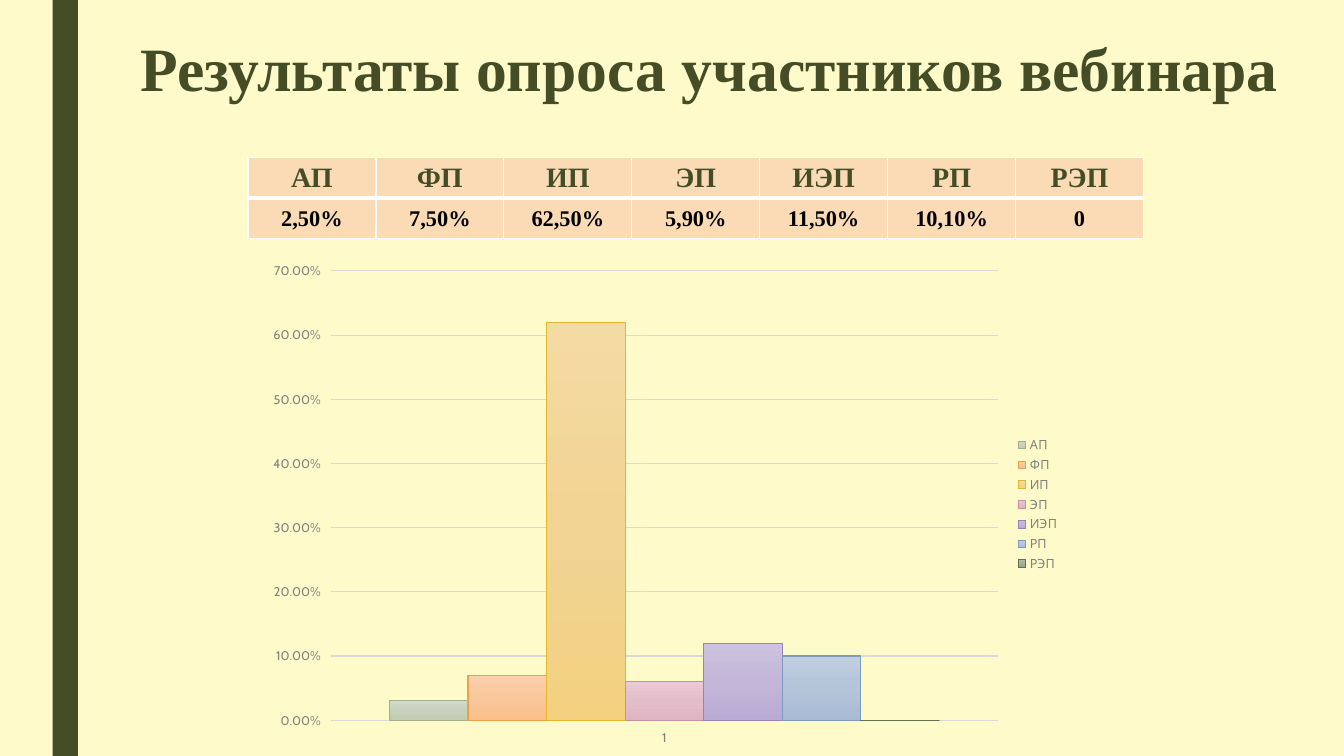
import copy

import lxml.etree
import pptx
import pptx.chart.data
import pptx.dml.color
import pptx.enum.chart
import pptx.enum.shapes
import pptx.enum.text
import pptx.oxml.ns
import pptx.util

THEME = {
    "background": "FEFAC9", "accent": "444D26", "cell": "FADBB5",
    "border": "FFFFFF", "value": "000000", "chart": "808080", "grid": "D9D9D9",
    "text_font": "Times New Roman", "chart_font": "Cabin",
    "title_size": 44, "header_size": 20, "value_size": 16, "chart_size": 9,
}
# name, table text, chart value, gradient from top to bottom, outline
RESULTS = [
    ("АП", "2,50%", 0.03, ("D1D9C9", "C8D1BD", "C0CCB3"), "A1B18F"),
    ("ФП", "7,50%", 0.07, ("FBD0AC", "F9C79D", "FCBF8A"), "EEA045"),
    ("ИП", "62,50%", 0.62, ("F4DBA3", "F1D494", "F3D180"), "E2B828"),
    ("ЭП", "5,90%", 0.06, ("E8CBD4", "E2BECA", "E0B4C2"), "CB8FA3"),
    ("ИЭП", "11,50%", 0.12, ("CDC3DF", "C3B6D8", "BAABD4"), "9982BC"),
    ("РП", "10,10%", 0.1, ("C0CEE0", "B4C4D9", "A8BBD5"), "7D9BBE"),
    ("РЭП", "0", 0, ("B0B8A8", "A4AD9C", "96A18B"), "62724E"),
]
rgb = pptx.dml.color.RGBColor.from_string

presentation = pptx.Presentation()
presentation.slide_width = pptx.util.Inches(13.33)
presentation.slide_height = pptx.util.Inches(7.5)


def area(left, top, width, height):
    """Turn percentages of the slide into left, top, width and height."""
    across, down = presentation.slide_width, presentation.slide_height
    return [int(share * side / 100) for share, side in
            zip((left, top, width, height), (across, down, across, down))]


def write(frame, text, *, size, color, spacing=None, anchor="MIDDLE"):
    """Write one centred bold paragraph into a text frame."""
    frame.word_wrap = True
    frame.vertical_anchor = pptx.enum.text.MSO_ANCHOR[anchor]
    paragraph = frame.paragraphs[0]
    paragraph.alignment = pptx.enum.text.PP_ALIGN.CENTER
    paragraph.line_spacing = spacing
    run = paragraph.add_run()
    run.text = text
    run.font.name = THEME["text_font"]
    run.font.size = pptx.util.Pt(size)
    run.font.bold = True
    run.font.color.rgb = rgb(color)


# Background and side bar
slide = presentation.slides.add_slide(presentation.slide_layouts[5])
slide.background.fill.solid()
slide.background.fill.fore_color.rgb = rgb(THEME["background"])
bar = slide.shapes.add_shape(pptx.enum.shapes.MSO_SHAPE.RECTANGLE, *area(3.92, 0, 1.88, 100))
bar.shadow.inherit = False
bar.fill.solid()
bar.fill.fore_color.rgb = rgb(THEME["accent"])
bar.line.fill.background()

# Title
title = slide.shapes.title
title.left, title.top, title.width, title.height = area(7.83, 4.27, 89.95, 12)
title.text_frame.margin_top = pptx.util.Inches(0.07)
write(title.text_frame, "Результаты опроса участников вебинара",
      size=THEME["title_size"], color=THEME["accent"], spacing=0.89, anchor="TOP")

# Table of results, with a thick rule under the header
table = slide.shapes.add_table(2, len(RESULTS), *area(18.45, 20.8, 66.64, 10.8)).table
row_styles = [
    (THEME["header_size"], THEME["accent"], {"lnL": 1, "lnR": 1, "lnT": 1, "lnB": 3}),
    (THEME["value_size"], THEME["value"], {"lnL": 1, "lnR": 1, "lnT": 3, "lnB": 1}),
]
for column, result in enumerate(RESULTS):
    for row, (size, color, borders) in enumerate(row_styles):
        cell = table.cell(row, column)
        cell.margin_left = cell.margin_right = cell.margin_top = pptx.util.Inches(0.01)
        cell.margin_bottom = 0
        cell.vertical_anchor = pptx.enum.text.MSO_ANCHOR.MIDDLE
        write(cell.text_frame, result[row], size=size, color=color)
        cell.fill.solid()
        cell.fill.fore_color.rgb = rgb(THEME["cell"])
        properties = cell._tc.get_or_add_tcPr()
        for position, (side, points) in enumerate(borders.items()):
            border = lxml.etree.Element(pptx.oxml.ns.qn(f"a:{side}"), w=str(pptx.util.Pt(points)))
            solid = lxml.etree.SubElement(border, pptx.oxml.ns.qn("a:solidFill"))
            lxml.etree.SubElement(solid, pptx.oxml.ns.qn("a:srgbClr"), val=THEME["border"])
            properties.insert(position, border)

# Column chart
chart_data = pptx.chart.data.CategoryChartData(number_format="0.00%")
chart_data.categories = ["1"]
for name, _, value, _, _ in RESULTS:
    chart_data.add_series(name, [value])
chart = slide.shapes.add_chart(
    pptx.enum.chart.XL_CHART_TYPE.COLUMN_CLUSTERED,
    *area(19.13, 33.47, 60.47, 66.53), chart_data).chart
chart.has_title = False
chart.font.name = THEME["chart_font"]
chart.font.size = pptx.util.Pt(THEME["chart_size"])
chart.font.color.rgb = rgb(THEME["chart"])
chart.has_legend = True
chart.legend.position = pptx.enum.chart.XL_LEGEND_POSITION.RIGHT
chart.legend.include_in_layout = False

# Axes
for axis in (chart.category_axis, chart.value_axis):
    axis.format.line.fill.background()
    axis.major_tick_mark = pptx.enum.chart.XL_TICK_MARK.OUTSIDE
    axis.minor_tick_mark = pptx.enum.chart.XL_TICK_MARK.NONE
value_axis = chart.value_axis
value_axis.minimum_scale = 0
value_axis.maximum_scale = 0.7
value_axis.major_unit = 0.1
value_axis.tick_labels.number_format = "0.00%"
value_axis.tick_labels.number_format_is_linked = False
value_axis.major_gridlines.format.line.color.rgb = rgb(THEME["grid"])
value_axis.major_gridlines.format.line.width = pptx.util.Pt(0.75)

# Columns with three-stop gradients
plot = chart.plots[0]
plot.gap_width = 150
plot.overlap = 0
plot.vary_by_categories = False
for series, (_, _, _, gradient, outline) in zip(plot.series, RESULTS):
    series.invert_if_negative = False
    fill = series.format.fill
    fill.gradient()
    fill.gradient_angle = 270
    stop_list = series._element.find(".//" + pptx.oxml.ns.qn("a:gsLst"))
    stop_list.insert(1, copy.deepcopy(stop_list[0]))
    for stop, color, position in zip(fill.gradient_stops, gradient, (0, 0.5, 1)):
        stop.color.rgb = rgb(color)
        stop.position = position
    series.format.line.color.rgb = rgb(outline)
    series.format.line.width = pptx.util.Pt(0.75)

presentation.save("out.pptx")
